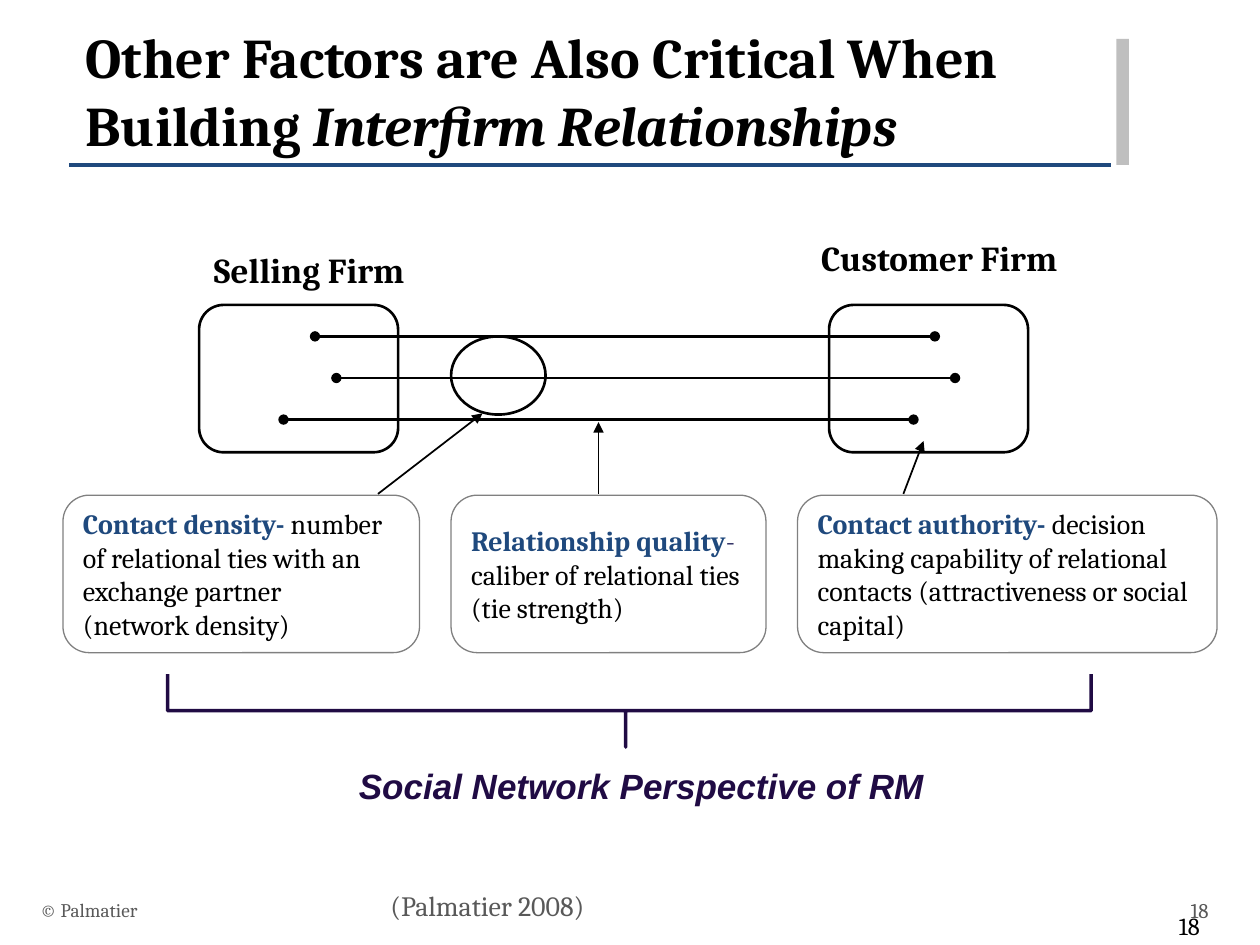
import pptx
import pptx.dml.color
import pptx.enum.shapes
import pptx.enum.text
import pptx.oxml
import pptx.oxml.ns
import pptx.util

Inches = pptx.util.Inches
RGBColor = pptx.dml.color.RGBColor
SHAPES = pptx.enum.shapes.MSO_SHAPE
ALIGN = pptx.enum.text.PP_ALIGN
ANCHOR = pptx.enum.text.MSO_ANCHOR

BLACK = RGBColor(0x00, 0x00, 0x00)
BLUE = RGBColor(0x1F, 0x49, 0x7D)
INDIGO = RGBColor(0x33, 0x33, 0x67)
PURPLE = RGBColor(0x20, 0x0B, 0x44)
DARK_GRAY = RGBColor(0x59, 0x59, 0x59)
GRAY = RGBColor(0x80, 0x80, 0x80)
LIGHT_GRAY = RGBColor(0xBF, 0xBF, 0xBF)


def write_text(shape, paragraphs, size=16, font="Cambria", color=BLACK, bold=False,
               italic=False, align=ALIGN.LEFT, anchor=ANCHOR.TOP):
    """Fill a shape with paragraphs, each a list of (text, overrides) runs."""
    frame = shape.text_frame
    frame.word_wrap = True
    frame.vertical_anchor = anchor
    for index, runs in enumerate(paragraphs):
        paragraph = frame.paragraphs[0] if index == 0 else frame.add_paragraph()
        paragraph.alignment = align
        for text, overrides in runs:
            run = paragraph.add_run()
            run.text = text
            run.font.name = font
            run.font.size = pptx.util.Pt(size)
            run.font.bold = overrides.get("bold", bold)
            run.font.italic = overrides.get("italic", italic)
            run.font.color.rgb = overrides.get("color", color)


def add_label(slide, box, text, **text_format):
    shape = slide.shapes.add_textbox(*map(Inches, box))
    runs = [(text, {})] if isinstance(text, str) else text
    write_text(shape, [runs], **text_format)


def add_outline(slide, kind, box, color=BLACK, width=1.5):
    shape = slide.shapes.add_shape(kind, *map(Inches, box))
    shape.shadow.inherit = False
    shape.fill.background()
    shape.line.color.rgb = color
    shape.line.width = pptx.util.Pt(width)
    return shape


def add_line(slide, start, end, color=BLACK, width=1.5, head=None, tail=None):
    line = slide.shapes.add_connector(
        pptx.enum.shapes.MSO_CONNECTOR.STRAIGHT, *map(Inches, (*start, *end)))
    line.line.color.rgb = color
    line.line.width = pptx.util.Pt(width)
    properties = line._element.spPr
    outline = properties.find(pptx.oxml.ns.qn("a:ln"))
    for tag, ending in (("headEnd", head), ("tailEnd", tail)):
        if ending:
            outline.append(pptx.oxml.parse_xml(
                f'<a:{tag} {pptx.oxml.ns.nsdecls("a")} type="{ending}"/>'))
    properties.append(pptx.oxml.parse_xml(f'<a:effectLst {pptx.oxml.ns.nsdecls("a")}/>'))


def add_title(slide, left, top, width, height):
    # Rule below the title and bar at its right
    rule_top = top + 1.22
    add_line(slide, (left - 0.03, rule_top), (left + width + 0.24, rule_top), BLUE, 2)
    bar = slide.shapes.add_shape(
        SHAPES.RECTANGLE, *map(Inches, (left + width + 0.28, rule_top - 1, 0.1, 1)))
    bar.shadow.inherit = False
    bar.fill.solid()
    bar.fill.fore_color.rgb = LIGHT_GRAY
    bar.line.fill.background()
    add_label(slide, (left, top, width, height),
              [("Other Factors are Also Critical When Building ", {}),
               ("Interfirm Relationships", {"italic": True})],
              size=32, bold=True, anchor=ANCHOR.MIDDLE)


def add_firm_network(slide, left, top, width, height):
    # Firms at both ends
    firm_width = 1.58
    for firm_left, name, name_left, name_top in (
            (left, "Selling Firm", left - 0.25, top - 0.5),
            (left + width - firm_width, "Customer Firm", left + 4.75, top - 0.59)):
        add_outline(slide, SHAPES.ROUNDED_RECTANGLE, (firm_left, top, firm_width, height))
        add_label(slide, (name_left, name_top, 2.25, 0.43), name,
                  size=20, bold=True, align=ALIGN.CENTER)

    # Ties between the contacts
    for index, (start, end) in enumerate(((0.92, 5.84), (1.09, 6), (0.67, 5.67))):
        tie_top = top + 0.25 + index * 0.33
        add_line(slide, (left + start, tie_top), (left + end, tie_top),
                 head="oval", tail="oval")

    # Ring around the ties
    add_outline(slide, SHAPES.OVAL, (left + 2, top + 0.25, 0.75, 0.62))


def add_factors(slide, left, top, height):
    heading = {"bold": True, "color": BLUE}
    factors = (
        (0, 2.83, [
            [("Contact density- ", heading),
             ("number of relational ties with an exchange partner", {})],
            [("(network density)", {})]]),
        (3.08, 2.5, [
            [("Relationship quality", heading), ("-", {"color": INDIGO}),
             (" caliber of relational ties (tie strength)", {})]]),
        (5.83, 3.33, [
            [("Contact authority- ", heading),
             ("decision making capability of relational contacts "
              "(attractiveness or social capital)", {})]]),
    )
    for offset, width, paragraphs in factors:
        box = add_outline(slide, SHAPES.ROUNDED_RECTANGLE,
                          (left + offset, top, width, height), GRAY, 0.75)
        write_text(box, paragraphs, anchor=ANCHOR.MIDDLE)

    # Arrows from each factor up to the network
    for start, end, rise in ((2.5, 3.33, 0.65), (4.25, 4.25, 0.58), (6.67, 6.83, 0.43)):
        add_line(slide, (left + start, top - 0.01), (left + end, top - rise),
                 width=1, tail="triangle")


def add_perspective(slide, left, top, width, height):
    # Brace turned to open upwards: its unrotated box shares the same centre
    brace_box = (left + (width - height) / 2, top + (height - width) / 2, height, width)
    brace = add_outline(slide, SHAPES.RIGHT_BRACE, brace_box, PURPLE, 2)
    brace.adjustments[0] = 0
    brace.adjustments[1] = 0.504
    brace.rotation = 90
    add_label(slide, (left + 1.42, top + 0.67, 5, 0.44), "Social Network Perspective of RM",
              size=20, font="Arial", color=PURPLE, bold=True, italic=True)


def add_footer(slide, left, top, height):
    add_label(slide, (left, top, 2.5, height), "© Palmatier",
              size=11, color=DARK_GRAY, anchor=ANCHOR.MIDDLE)
    add_label(slide, (3, top - 0.02, 5, 0.37), "(Palmatier 2008)", color=DARK_GRAY)
    # Page numbers
    for box, size, color in (((9.08, top, 0.61, height), 12, DARK_GRAY),
                             ((8.92, top + 0.18, 0.7, 0.3), 14, BLACK)):
        add_label(slide, box, "18", size=size, color=color,
                  align=ALIGN.RIGHT, anchor=ANCHOR.MIDDLE)


def main():
    presentation = pptx.Presentation()
    presentation.slide_width = Inches(10)
    presentation.slide_height = Inches(7.5)
    slide = presentation.slides.add_slide(presentation.slide_layouts[6])
    add_title(slide, 0.58, 0.09, 8, 1.25)
    add_firm_network(slide, 1.58, 2.42, 6.58, 1.17)
    add_factors(slide, 0.5, 3.93, 1.25)
    add_perspective(slide, 1.33, 5.35, 7.33, 0.58)
    add_footer(slide, 0.22, 7.02, 0.4)
    presentation.save("out.pptx")


if __name__ == "__main__":
    main()
